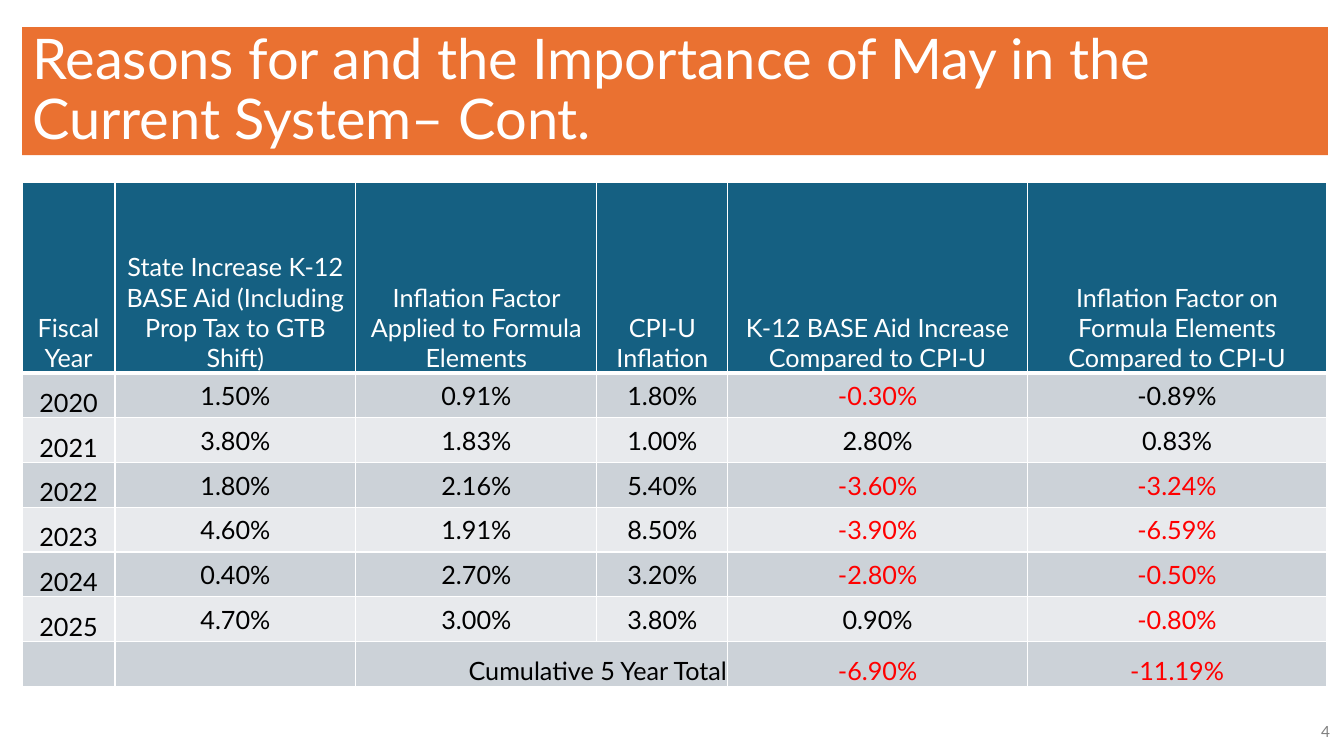
from lxml import etree
from pptx import Presentation
from pptx.dml.color import RGBColor
from pptx.enum.text import MSO_ANCHOR, MSO_AUTO_SIZE, PP_ALIGN
from pptx.oxml.ns import qn
from pptx.util import Inches, Pt

LEFT, CENTER, RIGHT = PP_ALIGN.LEFT, PP_ALIGN.CENTER, PP_ALIGN.RIGHT
MIDDLE, BOTTOM = MSO_ANCHOR.MIDDLE, MSO_ANCHOR.BOTTOM

TITLE = "Reasons for and the Importance of May in the Current System– Cont."
PAGE = "4"
ROWS = [
    ["Fiscal Year", "State Increase K-12 BASE Aid (Including Prop Tax to GTB Shift)",
     "Inflation Factor Applied to Formula Elements", "CPI-U Inflation",
     "K-12 BASE Aid Increase Compared to CPI-U",
     "Inflation Factor on Formula Elements Compared to CPI-U"],
    ["2020", "1.50%", "0.91%", "1.80%", "-0.30%", "-0.89%"],
    ["2021", "3.80%", "1.83%", "1.00%", "2.80%", "0.83%"],
    ["2022", "1.80%", "2.16%", "5.40%", "-3.60%", "-3.24%"],
    ["2023", "4.60%", "1.91%", "8.50%", "-3.90%", "-6.59%"],
    ["2024", "0.40%", "2.70%", "3.20%", "-2.80%", "-0.50%"],
    ["2025", "4.70%", "3.00%", "3.80%", "0.90%", "-0.80%"],
    ["", "", "Cumulative 5 Year Total", "", "-6.90%", "-11.19%"],
]
BLACK_NEGATIVES = {"-0.89%"}
COL_WIDTHS = [0.92, 2.39, 2.39, 1.3, 2.97, 2.97]
TABLE_HEIGHT, HEADER_HEIGHT = 5, 1.89
FONT = "Lato"
ORANGE, BLUE, WHITE, BLACK, RED, GRAY = (
    "EA7131", "156082", "FFFFFF", "000000", "FF0000", "808080")
BANDS = ["E8EAED", "CCD2D8"]


def color(hex_value):
    return RGBColor.from_string(hex_value)


def add_text(tf, text, size, hex_value, align):
    p = tf.paragraphs[0]
    p.alignment = align
    r = p.add_run()
    r.text = text
    r.font.name = FONT
    r.font.size = Pt(size)
    r.font.bold = False
    r.font.color.rgb = color(hex_value)
    return p


def set_fill(target, hex_value):
    target.fill.solid()
    target.fill.fore_color.rgb = color(hex_value)


def set_borders(cell, bottom_width):
    tcPr = cell._tc.get_or_add_tcPr()
    widths = {"a:lnL": 1, "a:lnR": 1, "a:lnT": 1, "a:lnB": bottom_width}
    for i, (tag, width) in enumerate(widths.items()):
        ln = etree.Element(qn(tag), w=str(Pt(width)))
        fill = etree.SubElement(ln, qn("a:solidFill"))
        etree.SubElement(fill, qn("a:srgbClr"), val=WHITE)
        tcPr.insert(i, ln)


def text_color(row, text):
    if row == 0:
        return WHITE
    return RED if text.startswith("-") and text not in BLACK_NEGATIVES else BLACK


def add_title(s):
    title = s.shapes.title
    title.left, title.top = Inches(0.22), Inches(0.27)
    title.width, title.height = Inches(12.95), Inches(1.27)
    set_fill(title, ORANGE)
    tf = title.text_frame
    tf.auto_size = MSO_AUTO_SIZE.NONE
    tf.word_wrap = True
    tf.vertical_anchor = MIDDLE
    add_text(tf, TITLE, 40, WHITE, LEFT).line_spacing = 0.9


def add_page_number(s):
    box = s.shapes.add_textbox(Inches(12.8), Inches(7.06), Inches(0.49), Inches(0.4))
    tf = box.text_frame
    tf.word_wrap = True
    tf.vertical_anchor = MIDDLE
    add_text(tf, PAGE, 11, GRAY, RIGHT).space_after = Pt(6)


def add_aid_table(s):
    table = s.shapes.add_table(len(ROWS), len(COL_WIDTHS), Inches(0.22), Inches(1.81),
                               Inches(sum(COL_WIDTHS)), Inches(TABLE_HEIGHT)).table
    for column, width in zip(table.columns, COL_WIDTHS):
        column.width = Inches(width)
    body_height = (TABLE_HEIGHT - HEADER_HEIGHT) / (len(ROWS) - 1)
    total = len(ROWS) - 1
    for i, values in enumerate(ROWS):
        table.rows[i].height = Inches(body_height if i else HEADER_HEIGHT)
        for j, text in enumerate(values):
            cell = table.cell(i, j)
            set_fill(cell, BANDS[i % 2] if i else BLUE)
            set_borders(cell, 1 if i else 3)
            cell.margin_left = cell.margin_right = cell.margin_top = Inches(0.01)
            cell.margin_bottom = 0
            cell.vertical_anchor = BOTTOM if j == 0 or i in (0, total) else MIDDLE
            if text:
                align = RIGHT if i == total and j == 2 else CENTER
                add_text(cell.text_frame, text, 18, text_color(i, text), align)
    table.cell(total, 2).merge(table.cell(total, 3))


def main():
    prs = Presentation()
    prs.slide_width, prs.slide_height = Inches(13.33), Inches(7.5)
    s = prs.slides.add_slide(prs.slide_layouts[5])
    add_title(s)
    add_page_number(s)
    add_aid_table(s)
    prs.save("out.pptx")


if __name__ == "__main__":
    main()
